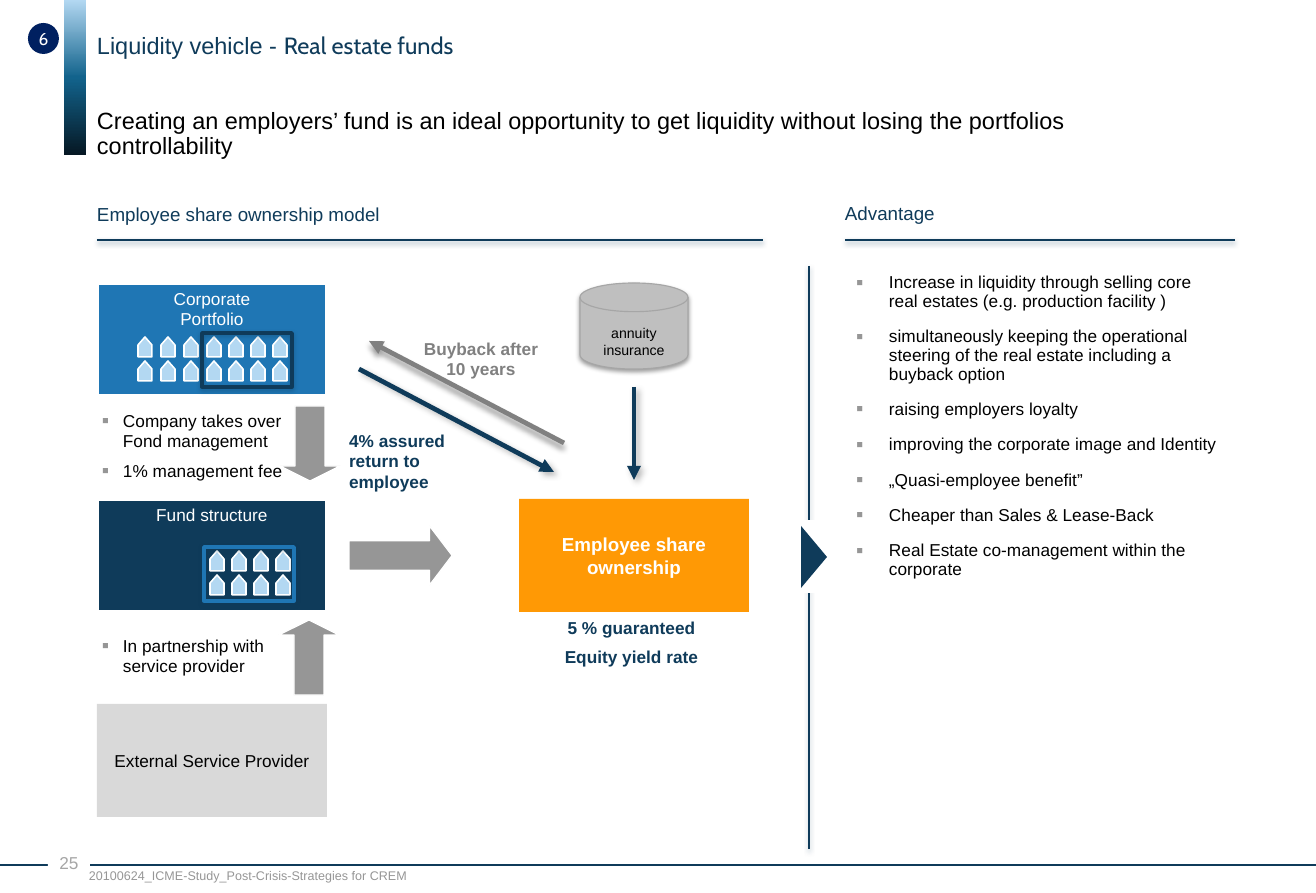
import pptx
import pptx.dml.color
import pptx.enum.shapes
import pptx.enum.text
import pptx.oxml
import pptx.oxml.ns
import pptx.util
from lxml import etree

EMU_PER_PX = 914400 / 112.8
NAVY, BLUE, PALE, GREY, WHITE, BLACK = "0F3B5A", "1F76B4", "B3D8F2", "969696", "FFFFFF", "000000"
SOFT_SHADOW = (NAVY, 38, 3.1, 1.6, 90)
ARROW_SHADOW = ("595959", 40, 4, 3, 45)
PRESET = pptx.enum.shapes.MSO_SHAPE
ALIGN = pptx.enum.text.PP_ALIGN
ANCHOR = pptx.enum.text.MSO_ANCHOR


def px(length):
    return pptx.util.Emu(round(length * EMU_PER_PX))


def rgb(color):
    return pptx.dml.color.RGBColor.from_string(color)


def add_child(parent, tag, **attributes):
    child = etree.SubElement(parent, pptx.oxml.ns.qn(tag))
    for name, value in attributes.items():
        child.set(name, str(value))
    return child


def set_shadow(element, shadow):
    """Replace the theme effects by one outer shadow, or by none."""
    properties = element.spPr
    effects = properties.find(pptx.oxml.ns.qn("a:effectLst"))
    if effects is None:
        effects = add_child(properties, "a:effectLst")
    if shadow:
        color, opacity, blur, distance, angle = shadow
        outer = add_child(effects, "a:outerShdw", blurRad=pptx.util.Pt(blur),
                          dist=pptx.util.Pt(distance), dir=angle * 60000, rotWithShape=0)
        tint = add_child(outer, "a:srgbClr", val=color)
        add_child(tint, "a:alpha", val=opacity * 1000)


def paint(shape, fill=None, line=None, width=1, shadow=None):
    if fill:
        shape.fill.solid()
        shape.fill.fore_color.rgb = rgb(fill)
    else:
        shape.fill.background()
    if line:
        shape.line.color.rgb = rgb(line)
        shape.line.width = pptx.util.Pt(width)
    else:
        shape.line.fill.background()
    shape.shadow.inherit = False
    set_shadow(shape._element, shadow)


def add_preset(slide, preset, box, adjustments=(), **look):
    shape = slide.shapes.add_shape(preset, *map(px, box))
    for index, value in enumerate(adjustments):
        shape.adjustments[index] = value
    paint(shape, **look)
    return shape


def add_line(slide, start, end, color=NAVY, width=1.0, shadow=None, arrow=False):
    line = slide.shapes.add_connector(pptx.enum.shapes.MSO_CONNECTOR.STRAIGHT,
                                      *map(px, start + end))
    line.line.color.rgb = rgb(color)
    line.line.width = pptx.util.Pt(width)
    if arrow:
        add_child(line.line._get_or_add_ln(), "a:tailEnd", type="triangle")
    set_shadow(line._element, shadow)


def add_run(paragraph, text, size, color, bold=False, font="Arial"):
    run = paragraph.add_run()
    run.text = text
    run.font.name, run.font.size, run.font.bold = font, pptx.util.Pt(size), bold
    run.font.color.rgb = rgb(color)


def add_bullet(paragraph, indent):
    properties = paragraph._p.get_or_add_pPr()
    properties.set("marL", str(px(indent)))
    properties.set("indent", str(-px(indent)))
    add_child(add_child(properties, "a:buClr"), "a:srgbClr", val=GREY)
    add_child(properties, "a:buSzPct", val=120000)
    add_child(properties, "a:buFont", typeface="Arial")
    add_child(properties, "a:buChar", char="▪")


def write(shape, paragraphs, size=11, color=BLACK, bold=False, font="Arial", align=ALIGN.LEFT,
          anchor=ANCHOR.TOP, insets=(0, 0, 0, 0), gap=0, spacing=1.0, indent=0, wrap=True):
    """Fill a shape with paragraphs; a newline inside one is a line break."""
    frame = shape.text_frame
    frame.auto_size = pptx.enum.text.MSO_AUTO_SIZE.NONE
    frame.word_wrap, frame.vertical_anchor = wrap, anchor
    (frame.margin_left, frame.margin_top,
     frame.margin_right, frame.margin_bottom) = map(px, insets)
    for index, text in enumerate(paragraphs):
        paragraph = frame.paragraphs[0] if index == 0 else frame.add_paragraph()
        paragraph.alignment, paragraph.line_spacing = align, spacing
        paragraph.space_before = pptx.util.Pt(gap if index else 0)
        if indent:
            add_bullet(paragraph, indent)
        for part_index, part in enumerate(text.split("\n")):
            if part_index:
                paragraph.add_line_break()
            add_run(paragraph, part, size, color, bold, font)
    return shape


def add_text(slide, box, paragraphs, **style):
    return write(slide.shapes.add_textbox(*map(px, box)), paragraphs, **style)


def place(placeholder, box):
    placeholder.left, placeholder.top, placeholder.width, placeholder.height = map(px, box)
    return placeholder


def add_houses(slide, left, top, columns, step):
    for column in range(columns):
        for row in range(2):
            x, y = left + column * step, top + row * 24
            outline = slide.shapes.build_freeform(x, y + 20, scale=EMU_PER_PX)
            outline.add_line_segments([(x, y + 8), (x + 7, y), (x + 14, y + 8), (x + 14, y + 20)])
            paint(outline.convert_to_shape(), PALE, WHITE)


def add_gradient_bar(slide):
    bar = add_preset(slide, PRESET.RECTANGLE, (64, 0, 22, 155))
    bar.fill.gradient()
    bar.fill.gradient_angle = 270
    stops = bar._element.spPr.find(".//" + pptx.oxml.ns.qn("a:gsLst"))
    for stop in list(stops):
        stops.remove(stop)
    for position, color in ((0, PALE), (50, "12638C"), (100, "061824")):
        add_child(add_child(stops, "a:gs", pos=position * 1000), "a:srgbClr", val=color)


def add_header(slide):
    add_gradient_bar(slide)
    badge = add_preset(slide, PRESET.OVAL, (28, 23, 31, 31), fill="002060")
    write(badge, ["6"], color=WHITE, font="Cabin", align=ALIGN.CENTER, anchor=ANCHOR.MIDDLE, wrap=False)
    topic = add_text(slide, (97, 31, 1042, 28), ["Liquidity vehicle - "], size=15, color=NAVY)
    add_run(topic.text_frame.paragraphs[0], "Real estate funds", 15, NAVY, font="Cabin")
    write(place(slide.shapes.title, (97, 61, 1042, 99)),
          ["Creating an employers’ fund is an ideal opportunity to get liquidity "
           "without losing the portfolios controllability"],
          size=15, anchor=ANCHOR.BOTTOM, spacing=0.9)
    for heading, left, top, width in (("Employee share ownership model", 97, 203, 666),
                                      ("Advantage", 845, 202, 390)):
        add_text(slide, (left, top, width, 23), [heading], size=12, color=NAVY)
        add_line(slide, (left, 240), (left + width, 240), shadow=SOFT_SHADOW)


def add_advantages(slide):
    add_line(slide, (809, 266), (809, 849), shadow=SOFT_SHADOW)
    add_preset(slide, PRESET.RECTANGLE, (783, 522, 44, 70), fill=WHITE, line=WHITE, width=2)
    pointer = add_preset(slide, PRESET.ISOSCELES_TRIANGLE, (783, 544, 62, 26), fill=NAVY)
    pointer.rotation = 90
    write(place(slide.placeholders[1], (845, 268, 390, 504)), [
        "Increase in liquidity through selling core real estates (e.g. production facility )",
        "simultaneously keeping the operational steering of the real estate including a buyback option",
        "raising employers loyalty",
        "improving the corporate image and Identity",
        "„Quasi-employee benefit”",
        "Cheaper than Sales & Lease-Back",
        "Real Estate co-management within the corporate",
    ], insets=(11, 6, 11, 6), gap=10.7, spacing=0.9, indent=33)


def add_model(slide):
    boxes = (
        (97, 283, BLUE, WHITE, ["Corporate", "Portfolio"], dict(color=WHITE, insets=(0, 5, 0, 0))),
        (97, 499, NAVY, WHITE, ["Fund structure"], dict(color=WHITE, insets=(0, 5, 0, 0))),
        (97, 704, "D9D9D9", None, ["External Service Provider"], dict(anchor=ANCHOR.MIDDLE)),
        (519, 499, "FF9905", None, ["Employee share ownership"],
         dict(size=12, color=WHITE, bold=True, anchor=ANCHOR.MIDDLE, insets=(12, 6, 12, 6))),
    )
    for left, top, fill, line, label, style in boxes:
        box = add_preset(slide, PRESET.RECTANGLE, (left, top, 230, 113), fill=fill, line=line, width=2)
        write(box, label, align=ALIGN.CENTER, **style)

    add_houses(slide, 138, 337, columns=3, step=23)
    add_houses(slide, 207, 337, columns=4, step=22)
    add_houses(slide, 210, 551, columns=4, step=22)
    for left, top, color in ((202, 333, NAVY), (204, 547, BLUE)):
        add_preset(slide, PRESET.RECTANGLE, (left, top, 90, 54), line=color, width=2.25, shadow=SOFT_SHADOW)

    for direction, box, head in ((PRESET.DOWN_ARROW, (280, 406, 60, 75), 0.25),
                                 (PRESET.UP_ARROW, (279, 620, 60, 75), 0.25),
                                 (PRESET.RIGHT_ARROW, (349, 526, 103, 59), 0.38)):
        add_preset(slide, direction, box, (0.5, head), fill=GREY, line=WHITE, width=0.75)

    annuity = add_preset(slide, PRESET.FLOWCHART_MAGNETIC_DISK, (580, 283, 108, 86), fill="BFBFBF",
                         line="A6A6A6", width=0.75, shadow=(BLACK, 38, 3.1, 1.6, 90))
    write(annuity, ["annuity", "insurance"], size=9, align=ALIGN.CENTER, anchor=ANCHOR.MIDDLE,
          insets=(0, 16, 0, 0), wrap=False)

    for start, end, color, shadow in (
            ((359, 369), (554, 472), NAVY, ARROW_SHADOW),
            ((564, 443), (369, 341), "808080", (BLACK, 40, 4, 3, 90)),
            ((634, 387), (634, 480), NAVY, ARROW_SHADOW)):
        add_line(slide, start, end, color, 3, shadow, arrow=True)

    note = dict(insets=(11, 6, 11, 6), gap=5.4)
    add_text(slide, (91, 404, 240, 83), ["Company takes over Fond management", "1% management fee"],
             indent=21, **note)
    add_text(slide, (91, 629, 240, 83), ["In partnership with\nservice provider"], indent=21, **note)
    add_text(slide, (338, 424, 144, 72), ["4% assured\nreturn to employee"], color=NAVY, bold=True, **note)
    add_text(slide, (409, 332, 144, 52), ["Buyback after 10 years"],
             color="808080", bold=True, align=ALIGN.CENTER, **note)
    add_text(slide, (513, 611, 237, 62), ["5 % guaranteed", "Equity yield rate"],
             color=NAVY, bold=True, align=ALIGN.CENTER, **note)


def add_footer(slide):
    add_line(slide, (1316, 865), (0, 865), width=0.75)
    page = add_preset(slide, PRESET.RECTANGLE, (48, 846, 42, 30), fill=WHITE)
    write(page, ["25"], color="A6A6A6", align=ALIGN.CENTER, insets=(2, 6, 2, 6))
    add_text(slide, (78, 862, 349, 27), ["20100624_ICME-Study_Post-Crisis-Strategies for CREM"],
             size=8, color=GREY, insets=(11, 6, 11, 6))


def main():
    deck = pptx.Presentation()
    deck.slide_width, deck.slide_height = px(1316), px(893)
    slide = deck.slides.add_slide(deck.slide_layouts[1])
    add_header(slide)
    add_advantages(slide)
    add_model(slide)
    add_footer(slide)
    deck.save("out.pptx")


if __name__ == "__main__":
    main()
